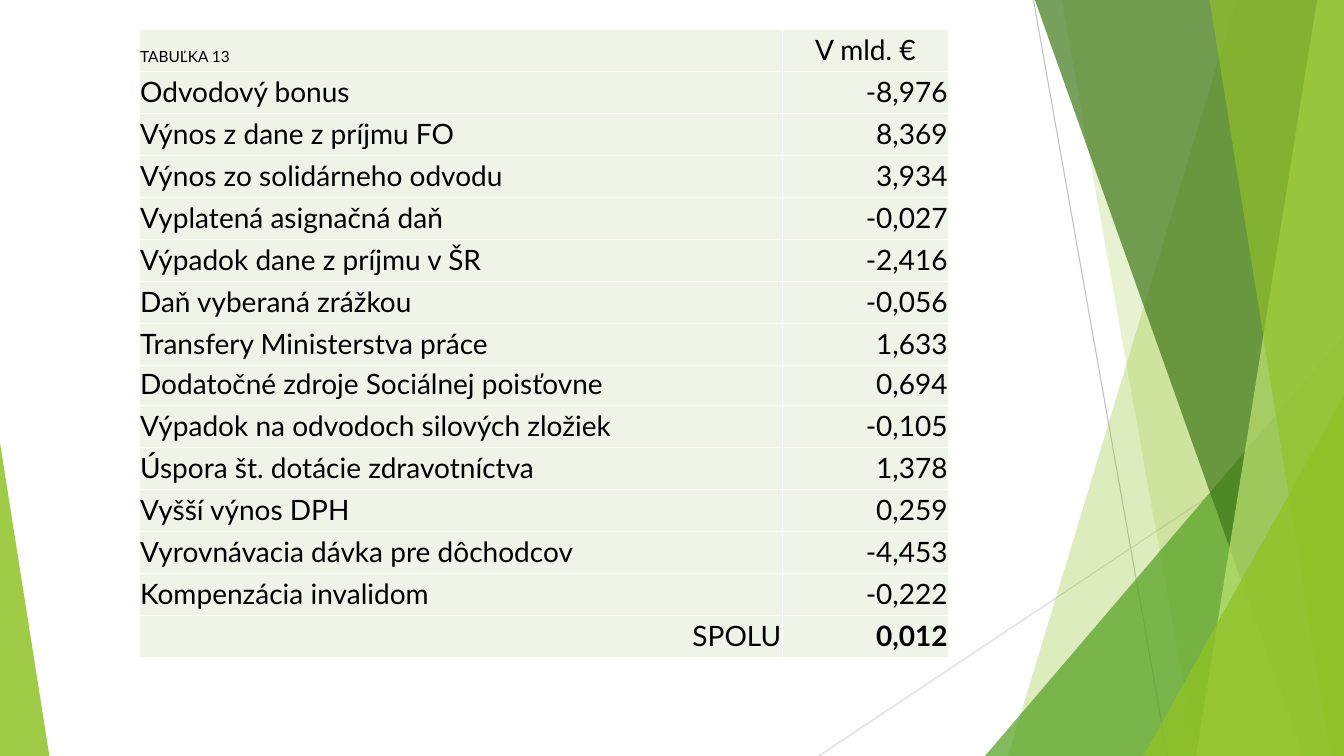
"""Build a slide with a table of public finance items on a faceted green backdrop."""
from lxml.etree import SubElement
from pptx import Presentation
from pptx.dml.color import RGBColor
from pptx.enum.shapes import MSO_CONNECTOR, MSO_SHAPE
from pptx.enum.text import MSO_ANCHOR, PP_ALIGN
from pptx.oxml.ns import qn
from pptx.util import Inches, Pt

COLORS = {
    "lime": "90C226", "green": "54A021", "forest": "3F7819", "pale": "C0E474",
    "gray": "BFBFBF", "silver": "D9D9D9", "cell": "EEF4E8", "white": "FFFFFF",
    "text": "000000",
}

presentation = Presentation()
presentation.slide_width = Inches(13.33)
presentation.slide_height = Inches(7.5)
column = presentation.slide_width / 100
row = presentation.slide_height / 100
slide = presentation.slides.add_slide(presentation.slide_layouts[6])


def write(cell, text, size=20, bold=False, align=PP_ALIGN.LEFT):
    """Fill a table cell with formatted text."""
    paragraph = cell.text_frame.paragraphs[0]
    paragraph.alignment = align
    run = paragraph.add_run()
    run.text = text
    run.font.name = "Lato"
    run.font.size = Pt(size)
    run.font.bold = bold
    run.font.color.rgb = RGBColor.from_string(COLORS["text"])


def paint(shape, color, opacity):
    """Give a shape a translucent fill without line or shadow."""
    shape.shadow.inherit = False
    shape.line.fill.background()
    shape.fill.solid()
    shape.fill.fore_color.rgb = RGBColor.from_string(COLORS[color])
    color_element = shape.fill._xPr.find(qn("a:solidFill"))[0]
    SubElement(color_element, qn("a:alpha"), val=str(opacity * 1000))


hairlines = [(76.9, 0, 86.87, 100, "gray"), (100, 53.73, 60.92, 100, "silver")]
for start_x, start_y, end_x, end_y, color in hairlines:
    connector = slide.shapes.add_connector(
        MSO_CONNECTOR.STRAIGHT,
        int(start_x * column), int(start_y * row), int(end_x * column), int(end_y * row))
    connector.line.color.rgb = RGBColor.from_string(COLORS[color])
    connector.line.width = Pt(0.75)
    SubElement(connector._element.spPr, qn("a:effectLst"))

# Ribbons give their left edge at top and bottom; triangles give left, top, right and apex.
facets = [
    ((92.12, 75.32), "lime", 30),
    ((78.77, 88.75), "lime", 20),
    ((73.29, 44.4, 100, 1), "green", 72),
    ((76.59, 96.85), "forest", 70),
    ((97.75, 89.42), "pale", 70),
    ((89.72, 98.87), "lime", 65),
    ((85.07, 52.4, 100, 1), "lime", 80),
    ((0, 58.53, 3.68, 0), "lime", 85),
]
for outline, color, opacity in facets:
    if len(outline) == 2:
        top_x, bottom_x = outline
        builder = slide.shapes.build_freeform(top_x, 0, scale=(column, row))
        builder.add_line_segments([(100, 0), (100, 100), (bottom_x, 100)], close=True)
        shape = builder.convert_to_shape()
    else:
        left, top, right, apex = outline
        shape = slide.shapes.add_shape(
            MSO_SHAPE.ISOSCELES_TRIANGLE, int(left * column), int(top * row),
            int((right - left) * column), int((100 - top) * row))
        shape.adjustments[0] = apex
    paint(shape, color, opacity)

items = [
    ("TABUĽKA 13", "V mld. €"),
    ("Odvodový bonus", "-8,976"),
    ("Výnos z dane z príjmu FO", "8,369"),
    ("Výnos zo solidárneho odvodu", "3,934"),
    ("Vyplatená asignačná daň", "-0,027"),
    ("Výpadok dane z príjmu v ŠR", "-2,416"),
    ("Daň vyberaná zrážkou", "-0,056"),
    ("Transfery Ministerstva práce", "1,633"),
    ("Dodatočné zdroje Sociálnej poisťovne", "0,694"),
    ("Výpadok na odvodoch silových zložiek", "-0,105"),
    ("Úspora št. dotácie zdravotníctva", "1,378"),
    ("Vyšší výnos DPH", "0,259"),
    ("Vyrovnávacia dávka pre dôchodcov", "-4,453"),
    ("Kompenzácia invalidom", "-0,222"),
    ("SPOLU", "0,012"),
]
last = len(items) - 1
table = slide.shapes.add_table(
    len(items), 2, int(10.35 * column), int(3.87 * row),
    int(60.24 * column), int(82.91 * row)).table
table.first_row = False
table.horz_banding = False
table.columns[0].width = int(47.86 * column)
table.columns[1].width = int(12.38 * column)

for index, (label, amount) in enumerate(items):
    table.rows[index].height = int((5.07 if index == 8 else 5.56) * row)
    for cell in table.rows[index].cells:
        cell.vertical_anchor = MSO_ANCHOR.BOTTOM
        cell.margin_left = cell.margin_right = cell.margin_top = Inches(0.01)
        cell.margin_bottom = Inches(0.05)
        properties = cell._tc.get_or_add_tcPr()
        for side in ("lnL", "lnR", "lnT", "lnB"):
            border = SubElement(properties, qn(f"a:{side}"), w=str(Pt(1)))
            border_fill = SubElement(border, qn("a:solidFill"))
            SubElement(border_fill, qn("a:srgbClr"), val=COLORS["white"])
        cell.fill.solid()
        cell.fill.fore_color.rgb = RGBColor.from_string(COLORS["cell"])
    write(table.cell(index, 0), label, size=11 if index == 0 else 20,
          align=PP_ALIGN.RIGHT if index == last else PP_ALIGN.LEFT)
    write(table.cell(index, 1), amount, bold=index == last,
          align=PP_ALIGN.CENTER if index == 0 else PP_ALIGN.RIGHT)

presentation.save("out.pptx")
